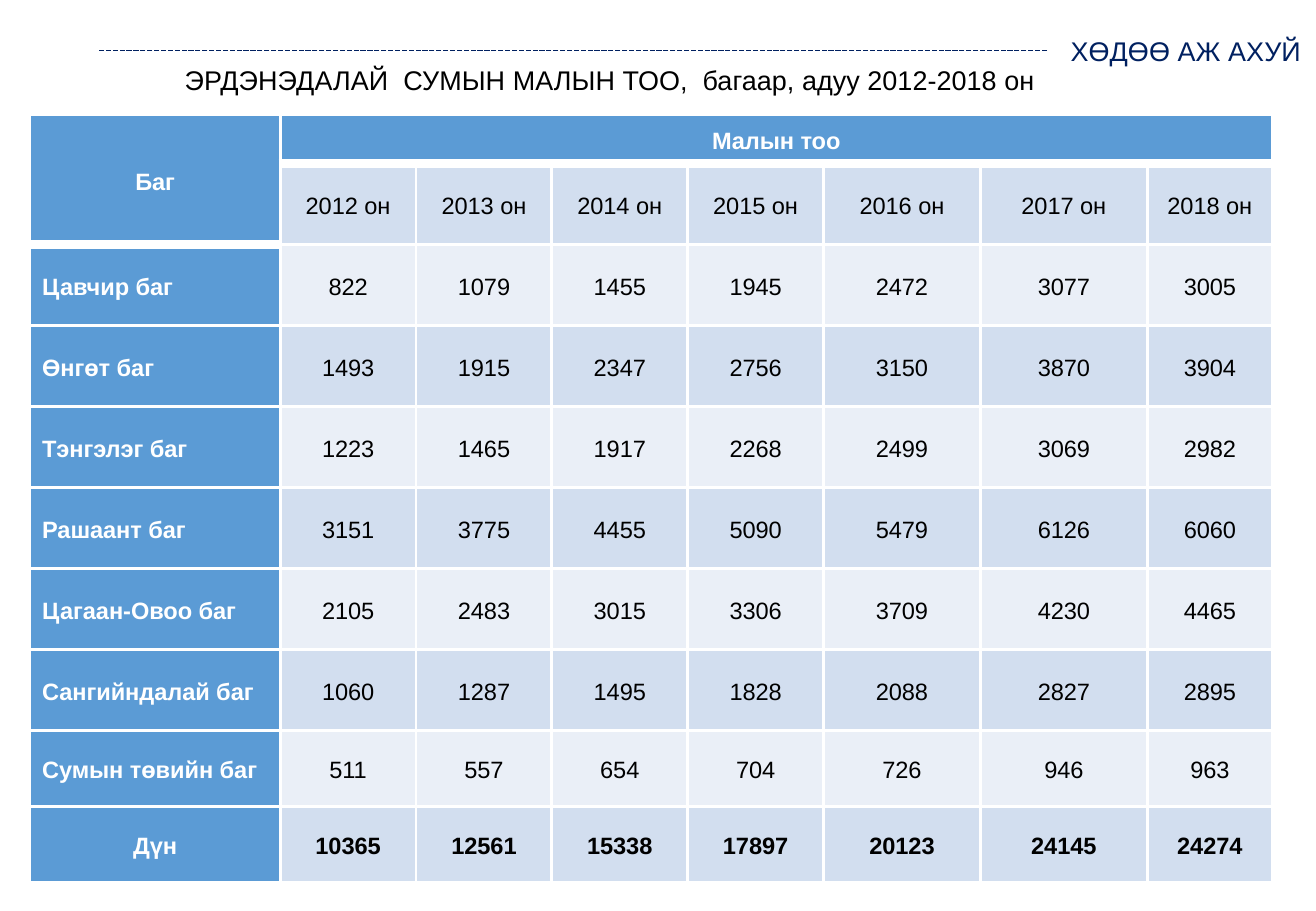
from lxml import etree
from pptx import Presentation
from pptx.dml.color import RGBColor
from pptx.enum.dml import MSO_LINE
from pptx.enum.shapes import MSO_CONNECTOR
from pptx.enum.text import MSO_ANCHOR, PP_ALIGN
from pptx.oxml.ns import qn
from pptx.util import Pt

LEFT, CENTER = PP_ALIGN.LEFT, PP_ALIGN.CENTER
MIDDLE = MSO_ANCHOR.MIDDLE
DASH = MSO_LINE.SQUARE_DOT
STRAIGHT = MSO_CONNECTOR.STRAIGHT

WHITE = RGBColor(0xFF, 0xFF, 0xFF)
BLACK = RGBColor(0, 0, 0)
NAVY = RGBColor(0x00, 0x20, 0x60)
BLUE = RGBColor(0x5B, 0x9B, 0xD5)
BAND = RGBColor(0xD2, 0xDE, 0xEF)
PALE = RGBColor(0xEA, 0xEF, 0xF7)
FONT = "Arial"

# Content
TOPIC = "ХӨДӨӨ АЖ АХУЙ"
TITLE = "ЭРДЭНЭДАЛАЙ  СУМЫН МАЛЫН ТОО,  багаар, адуу 2012-2018 он"
TOTAL = "Дүн"
HEADS = [
    ["Баг", "Малын тоо"] + [""] * 6,
    [""] + [f"{year} он" for year in range(2012, 2019)],
]
HERDS = [
    ("Цавчир баг", 822, 1079, 1455, 1945, 2472, 3077, 3005),
    ("Өнгөт баг", 1493, 1915, 2347, 2756, 3150, 3870, 3904),
    ("Тэнгэлэг баг", 1223, 1465, 1917, 2268, 2499, 3069, 2982),
    ("Рашаант баг", 3151, 3775, 4455, 5090, 5479, 6126, 6060),
    ("Цагаан-Овоо баг", 2105, 2483, 3015, 3306, 3709, 4230, 4465),
    ("Сангийндалай баг", 1060, 1287, 1495, 1828, 2088, 2827, 2895),
    ("Сумын төвийн баг", 511, 557, 654, 704, 726, 946, 963),
    (TOTAL, 10365, 12561, 15338, 17897, 20123, 24145, 24274),
]
ROWS = HEADS + HERDS
WIDTHS = [74.2] + [40.3] * 4 + [46.5, 49.6, 37]
HEIGHTS = [14.6] + [24] * 7 + [22.6, 22.4]


def write(frame, text, size, color, align, bold=False, space=1.0):
    para = frame.paragraphs[0]
    para.alignment, para.line_spacing = align, space
    run = para.add_run()
    run.text = text
    look = {"name": FONT, "size": Pt(size), "bold": bold}
    for key, value in look.items():
        setattr(run.font, key, value)
    run.font.color.rgb = color


def label(slide, box, text, color, align):
    frame = slide.shapes.add_textbox(*map(Pt, box)).text_frame
    inset = {"margin_left": 0, "margin_right": 0, "margin_top": 0,
             "margin_bottom": 0, "vertical_anchor": MIDDLE,
             "word_wrap": True}
    for key, value in inset.items():
        setattr(frame, key, value)
    write(frame, text, 8, color, align)


def edge(cell, sides):
    """Add white borders ahead of the cell fill."""
    props = cell._tc.get_or_add_tcPr()
    for spot, (side, width) in enumerate(sides.items()):
        line = etree.Element(qn(f"a:ln{side}"), w=str(Pt(width)))
        fill = etree.SubElement(line, qn("a:solidFill"))
        etree.SubElement(fill, qn("a:srgbClr"), val=str(WHITE))
        props.insert(spot, line)


def fill_cell(cell, row, col, text):
    head = row == 0 or col == 0
    total = row == len(ROWS) - 1
    inset = {"margin_left": Pt(3.6), "margin_right": Pt(3.6),
             "margin_top": 0, "margin_bottom": 0, "vertical_anchor": MIDDLE}
    for key, value in inset.items():
        setattr(cell, key, value)
    cell.fill.solid()
    cell.fill.fore_color.rgb = BLUE if head else BAND if row % 2 else PALE
    # Thick rule below each header cell
    last = 1 if col == 0 else 0
    edge(cell, {"L": 1, "R": 1, "T": 3 if row == last + 1 else 1,
                "B": 3 if row <= last else 1})
    if text:
        name = col == 0 and row > 1 and not total
        write(cell.text_frame, text, 7, WHITE if head else BLACK,
              LEFT if name else CENTER, head or total, 1.15)
    else:
        para = cell.text_frame.paragraphs[0]._p
        etree.SubElement(para, qn("a:endParaRPr"), sz="700")


def main():
    deck = Presentation()
    deck.slide_width, deck.slide_height = Pt(390.24), Pt(270)
    slide = deck.slides.add_slide(deck.slide_layouts[6])

    # Title
    label(slide, (13, 15, 336, 17), TITLE, BLACK, CENTER)

    # Table
    grid = slide.shapes.add_table(
        len(ROWS), len(WIDTHS), Pt(8.9), Pt(34),
        Pt(sum(WIDTHS)), Pt(sum(HEIGHTS))).table
    for col, width in zip(grid.columns, WIDTHS):
        col.width = Pt(width)
    for row, height in zip(grid.rows, HEIGHTS):
        row.height = Pt(height)
    for r, row in enumerate(ROWS):
        for c, value in enumerate(row):
            fill_cell(grid.cell(r, c), r, c, str(value))
    grid.cell(0, 0).merge(grid.cell(1, 0))
    grid.cell(0, 1).merge(grid.cell(0, len(WIDTHS) - 1))

    # Topic with dashed rule
    rule = slide.shapes.add_connector(
        STRAIGHT, Pt(310.5), Pt(15), Pt(29.4), Pt(15))
    rule.line.color.rgb = NAVY
    rule.line.width = Pt(0.5)
    rule.line.dash_style = DASH
    etree.SubElement(rule._element.spPr, qn("a:effectLst"))
    label(slide, (317.5, 6.5, 72.5, 17), TOPIC, NAVY, LEFT)

    deck.save("out.pptx")


if __name__ == "__main__":
    main()
